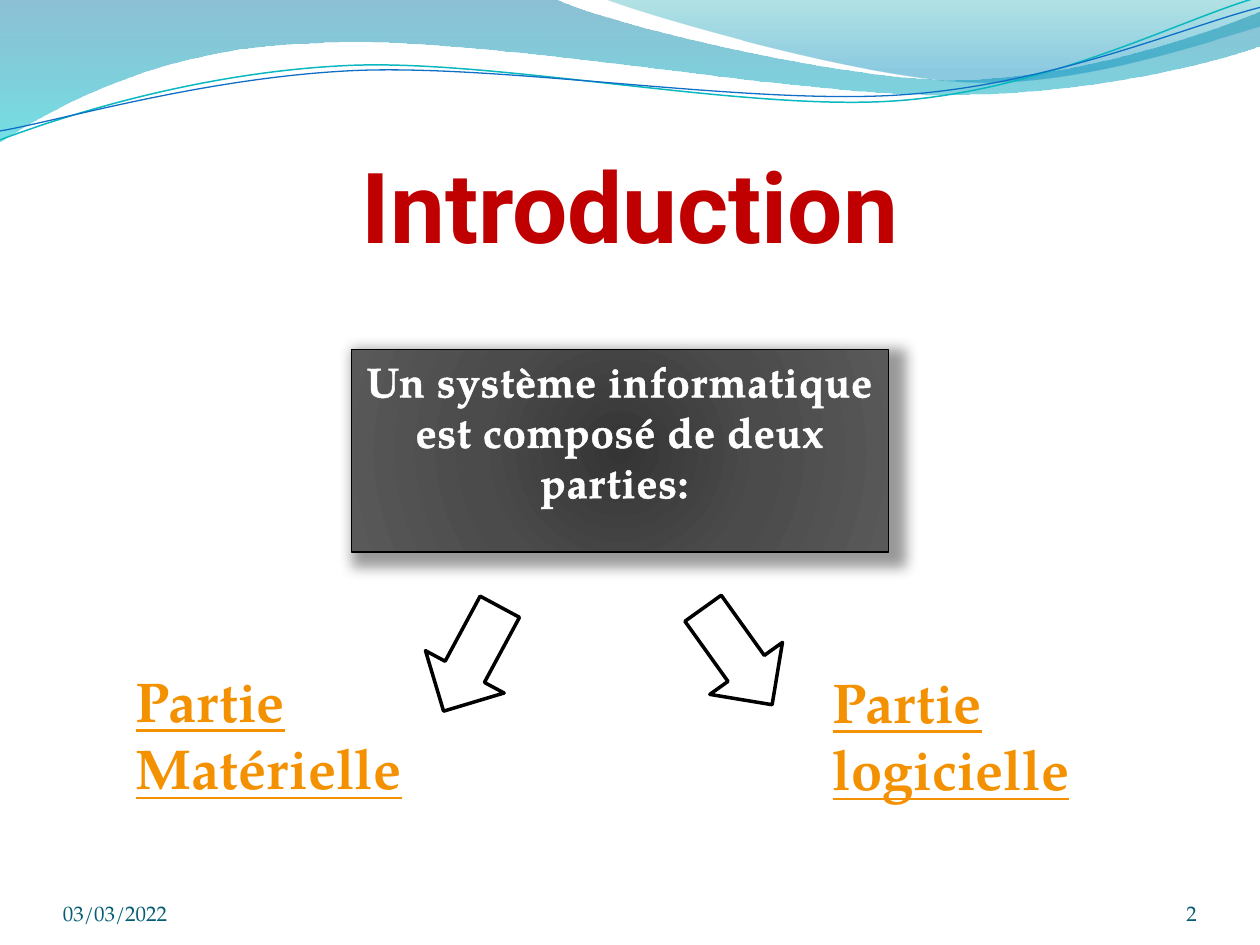
import math

from lxml import etree
from pptx import Presentation
from pptx.dml.color import RGBColor
from pptx.enum import shapes, text
from pptx.oxml import ns
from pptx.util import Cm, Pt

SERIF, SANS = "TeX Gyre Pagella", "Roboto"
WHITE = RGBColor(0xFF, 0xFF, 0xFF)
BLACK = RGBColor(0, 0, 0)
RED = RGBColor(0xC0, 0, 0)
ORANGE = RGBColor(0xF4, 0x91, 0)
GREY = RGBColor(0x7D, 0x7D, 0x7D)
PETROL = RGBColor(0x04, 0x5D, 0x75)
TEAL = RGBColor(0x0A, 0xB8, 0xBF)
BLUE = RGBColor(0x0F, 0x6F, 0xC6)

# Content: places are left, top, width, height in cm
TITLE = "Introduction"
STATEMENT = "Un système informatique est composé de deux parties: "
PARTS = [("Partie Matérielle", (2.49, 13.31, 7.01, 3)),
         ("Partie logicielle", (16.54, 13.33, 5.59, 3))]
ARROWS = [((8.61, 12.09, 1.8, 2.39), 28.3), ((13.97, 12.04, 1.8, 2.39), 324.4)]
FOOTERS = [("03/03/2022", (1.27, 17.65, 5.92, 1.02), text.PP_ALIGN.LEFT),
           ("2", (22.02, 17.65, 2.11, 1.02), text.PP_ALIGN.RIGHT)]

# Waves: a start, then segments of one point (line) or three (Bézier curve), in cm
WAVES = [
    ((0, 0), [[(11.18, -0.03)],
              [(12.09, 0.43), (16.87, 1.6), (19.25, 1.6)],
              [(21.67, 1.6), (24.33, 0.66), (25.4, 0.23)],
              [(25.43, 0.91)],
              [(24.97, 1.12), (22.1, 1.93), (18.95, 1.91)],
              [(15.8, 1.91), (9.7, 0.71), (6.53, 0.86)],
              [(3.28, 0.91), (1.17, 2.11), (-0.03, 2.87)]],
     [(0, "0074A1", 45), (100, "00C6CF", 55)]),
    ((12.17, -0.03), [[(12.93, 0.28), (17.32, 1.57), (19.53, 1.65)],
                      [(21.74, 1.75), (24.41, 0.81), (25.4, 0.53)],
                      [(25.4, 0)]],
     [(0, "00A1A9", 30), (80, "008BBF", 45)]),
]
RIPPLES = [
    ((0, 2.82), [[(1.22, 2.36), (4.01, 1.45), (7.04, 1.32)],
                 [(10.03, 1.19), (15.06, 2.26), (18.11, 2.03)],
                 [(21.16, 1.8), (23.83, 0.38), (25.35, -0.05)]], TEAL, 0.85),
    ((0, 2.64), [[(1.19, 2.44), (4.17, 1.55), (7.19, 1.42)],
                 [(10.24, 1.3), (15.16, 2.13), (18.21, 1.91)],
                 [(21.23, 1.7), (23.9, 0.53), (25.4, 0.15)]], BLUE, 0.75),
]
RIPPLE_TILT = 2.7
RIPPLE_CENTRE = (12.68, 1.48)
BOX_STOPS = [(0, "353535", 100), (50, "4B4B4B", 100), (100, "595959", 100)]


def place(box):
    return [Cm(length) for length in box]


def child(parent, tag, **attributes):
    return etree.SubElement(parent, ns.qn(tag),
                            {key: str(value) for key, value in attributes.items()})


def gradient(shape, stops, radial=False):
    shape.fill.gradient()
    grad = shape._element.spPr.find(ns.qn("a:gradFill"))
    for old in list(grad):
        grad.remove(old)
    stop_list = child(grad, "a:gsLst")
    for position, colour, opacity in stops:
        stop = child(stop_list, "a:gs", pos=position * 1000)
        child(child(stop, "a:srgbClr", val=colour), "a:alpha", val=opacity * 1000)
    if radial:
        child(child(grad, "a:path", path="circle"), "a:fillToRect",
              l=50000, t=50000, r=50000, b=50000)
    else:
        child(grad, "a:lin", ang=5400000, scaled=0)


def tilted(point, degrees):
    cos, sin = math.cos(math.radians(degrees)), math.sin(math.radians(degrees))
    dx, dy = (value - middle for value, middle in zip(point, RIPPLE_CENTRE))
    return RIPPLE_CENTRE[0] + dx * cos - dy * sin, RIPPLE_CENTRE[1] + dx * sin + dy * cos


def outline(slide, start, segments, closed, tilt=0):
    def corner(point):
        return place(tilted(point, tilt))

    builder = slide.shapes.build_freeform(*corner(start))
    builder.add_line_segments([corner(point) for segment in segments for point in segment],
                              close=closed)
    shape = builder.convert_to_shape()
    shape.rotation = -tilt % 360
    shape.shadow.inherit = False
    # Turn each group of three points into one Bézier curve
    lines = shape._element.iter(ns.qn("a:lnTo"))
    lines = iter(list(lines))
    for segment in segments:
        group = [next(lines) for _ in segment]
        if len(group) == 3:
            curve = etree.Element(ns.qn("a:cubicBezTo"))
            group[0].addprevious(curve)
            for line in group:
                curve.append(line[0])
                line.getparent().remove(line)
    return shape


def write(shape, words, size, colour, face=SERIF, bold=False, underline=None,
          align=text.PP_ALIGN.LEFT):
    frame = shape.text_frame
    frame.word_wrap = True
    paragraph = frame.paragraphs[0]
    paragraph.text = words
    paragraph.alignment = align
    font = paragraph.font
    font.name, font.size, font.bold, font.underline = face, Pt(size), bold, underline
    font.color.rgb = colour
    return frame


def edge_letters(frame, colour, width):
    properties = frame.paragraphs[0].runs[0].font._element
    edge = child(properties, "a:ln", w=Pt(width))
    child(child(edge, "a:solidFill"), "a:srgbClr", val=colour)
    return properties


def sit_at_bottom(frame):
    frame.vertical_anchor = text.MSO_ANCHOR.BOTTOM
    frame.margin_left = frame.margin_right = frame.margin_top = frame.margin_bottom = 0


presentation = Presentation()
presentation.slide_width, presentation.slide_height = Cm(25.4), Cm(19.05)
slide = presentation.slides.add_slide(presentation.slide_layouts[5])

# Waves across the top
for start, segments, stops in WAVES:
    wave = outline(slide, start, segments, True)
    gradient(wave, stops)
    wave.line.fill.background()
for start, segments, colour, width in RIPPLES:
    ripple = outline(slide, start, segments, False, RIPPLE_TILT)
    ripple.fill.background()
    ripple.line.color.rgb = colour
    ripple.line.width = Pt(width)

# Title
title = slide.shapes.title
title.left, title.top, title.width, title.height = place((1.3, 2.13, 22.86, 3.18))
title_frame = write(title, TITLE, 56, RED, SANS, True, align=text.PP_ALIGN.CENTER)
title_frame.auto_size = text.MSO_AUTO_SIZE.NONE
sit_at_bottom(title_frame)
title_frame.margin_right = Cm(0.05)

# Statement box with its shadow
statement = slide.shapes.add_shape(shapes.MSO_SHAPE.RECTANGLE,
                                   *place((7.09, 7.04, 10.82, 4.09)))
gradient(statement, BOX_STOPS, radial=True)
statement.line.color.rgb = BLACK
statement.line.width = Pt(0.75)
statement.shadow.inherit = False
effects = statement._element.spPr.find(ns.qn("a:effectLst"))
shadow = child(effects, "a:outerShdw", blurRad=Pt(8), dist=0, dir=0,
               sx=103000, sy=107000, algn="tl", rotWithShape=0)
child(child(shadow, "a:srgbClr", val="000000"), "a:alpha", val=40000)
statement_frame = write(statement, STATEMENT, 24, WHITE, bold=True,
                        align=text.PP_ALIGN.CENTER)
statement_frame.vertical_anchor = text.MSO_ANCHOR.TOP
statement_frame.paragraphs[0].space_before = Pt(5.3)
edge_letters(statement_frame, WHITE, 0).set("spc", "50")

# The two parts and the arrows to them
for words, box in PARTS:
    part_frame = write(slide.shapes.add_textbox(*place(box)), words, 32, ORANGE,
                       bold=True, underline=True)
    part_frame.auto_size = text.MSO_AUTO_SIZE.SHAPE_TO_FIT_TEXT
    edge_letters(part_frame, GREY, 0.83)
for box, angle in ARROWS:
    arrow = slide.shapes.add_shape(shapes.MSO_SHAPE.DOWN_ARROW, *place(box))
    arrow.rotation = angle
    arrow.shadow.inherit = False
    arrow.fill.solid()
    arrow.fill.fore_color.rgb = WHITE
    arrow.line.color.rgb = BLACK
    arrow.line.width = Pt(2)

# Date and slide number
for words, box, align in FOOTERS:
    sit_at_bottom(write(slide.shapes.add_textbox(*place(box)), words, 12, PETROL,
                        align=align))

presentation.save("out.pptx")
